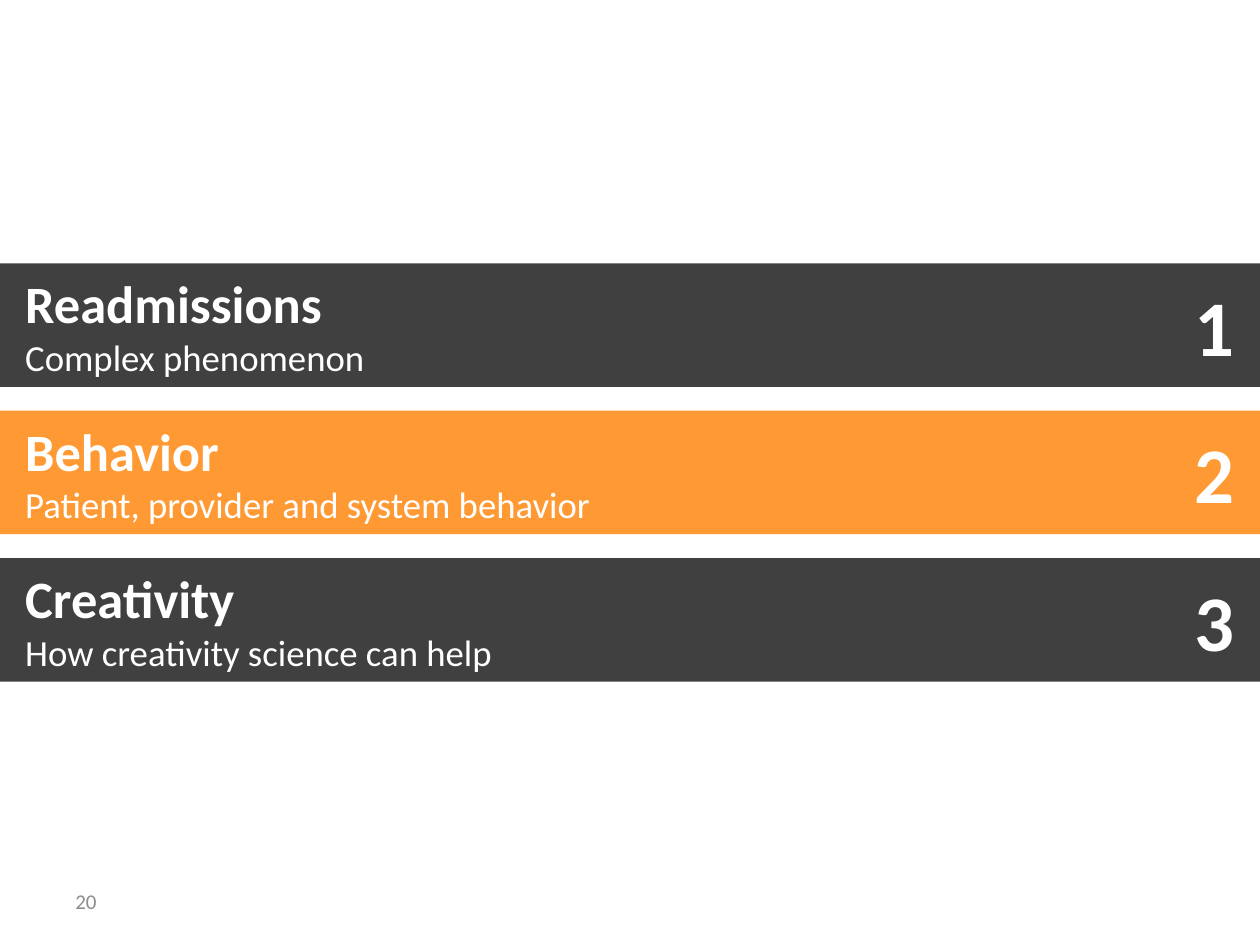
from dataclasses import dataclass

from pptx import Presentation
from pptx.dml.color import RGBColor
from pptx.enum.shapes import MSO_SHAPE
from pptx.enum.text import MSO_ANCHOR, MSO_AUTO_SIZE, PP_ALIGN
from pptx.slide import Slide
from pptx.text.text import TextFrame, _Paragraph
from pptx.util import Inches, Pt

FONT = "Calibri"
WHITE = RGBColor(0xFF, 0xFF, 0xFF)
DARK = RGBColor(0x40, 0x40, 0x40)
ORANGE = RGBColor(0xFF, 0x99, 0x33)
GRAY = RGBColor(0x8C, 0x8C, 0x8C)

FIRST_TOP = 2.09
BAND_STEP = 1.17
BAND_HEIGHT = 0.98


@dataclass
class Section:
    title: str
    subtitle: str
    color: RGBColor


SECTIONS = [
    Section("Readmissions", "Complex phenomenon", DARK),
    Section("Behavior", "Patient, provider and system behavior", ORANGE),
    Section("Creativity", "How creativity science can help", DARK),
]


def add_run(paragraph: _Paragraph, text: str, size: int,
            color: RGBColor = WHITE, bold: bool = False) -> None:
    run = paragraph.add_run()
    run.text = text
    run.font.name = FONT
    run.font.size = Pt(size)
    run.font.bold = bold
    run.font.color.rgb = color


def add_text_frame(slide: Slide, left: float, top: float, width: float,
                   height: float, wrap: bool = True) -> TextFrame:
    """Add a vertically centred text box without margins."""
    box = slide.shapes.add_textbox(
        Inches(left), Inches(top), Inches(width), Inches(height))
    frame = box.text_frame
    frame.word_wrap = wrap
    frame.vertical_anchor = MSO_ANCHOR.MIDDLE
    frame.margin_left = frame.margin_right = Inches(0)
    frame.margin_top = frame.margin_bottom = Inches(0)
    return frame


def add_section(slide: Slide, number: int, section: Section) -> None:
    top = FIRST_TOP + (number - 1) * BAND_STEP

    # Full-width band
    band = slide.shapes.add_shape(
        MSO_SHAPE.RECTANGLE, Inches(0), Inches(top), Inches(10), Inches(BAND_HEIGHT))
    band.shadow.inherit = False
    band.fill.solid()
    band.fill.fore_color.rgb = section.color
    band.line.fill.background()

    # Title and subtitle
    frame = add_text_frame(slide, 0.2, top + 0.04, 9.22, 0.9)
    add_run(frame.paragraphs[0], section.title, 30, bold=True)
    add_run(frame.add_paragraph(), section.subtitle, 21)

    # Section number
    frame = add_text_frame(slide, 9.45, top + 0.11, 0.35, 0.76, wrap=False)
    frame.auto_size = MSO_AUTO_SIZE.SHAPE_TO_FIT_TEXT
    frame.paragraphs[0].alignment = PP_ALIGN.RIGHT
    add_run(frame.paragraphs[0], str(number), 45, bold=True)


def main() -> None:
    presentation = Presentation()
    presentation.slide_width = Inches(10)
    presentation.slide_height = Inches(7.5)
    slide = presentation.slides.add_slide(presentation.slide_layouts[6])

    # Page number
    frame = add_text_frame(slide, 0.5, 6.95, 2.33, 0.4)
    frame.margin_left = Inches(0.1)
    add_run(frame.paragraphs[0], "20", 12, GRAY)

    # Agenda bands
    for number, section in enumerate(SECTIONS, start=1):
        add_section(slide, number, section)

    presentation.save("out.pptx")


if __name__ == "__main__":
    main()
